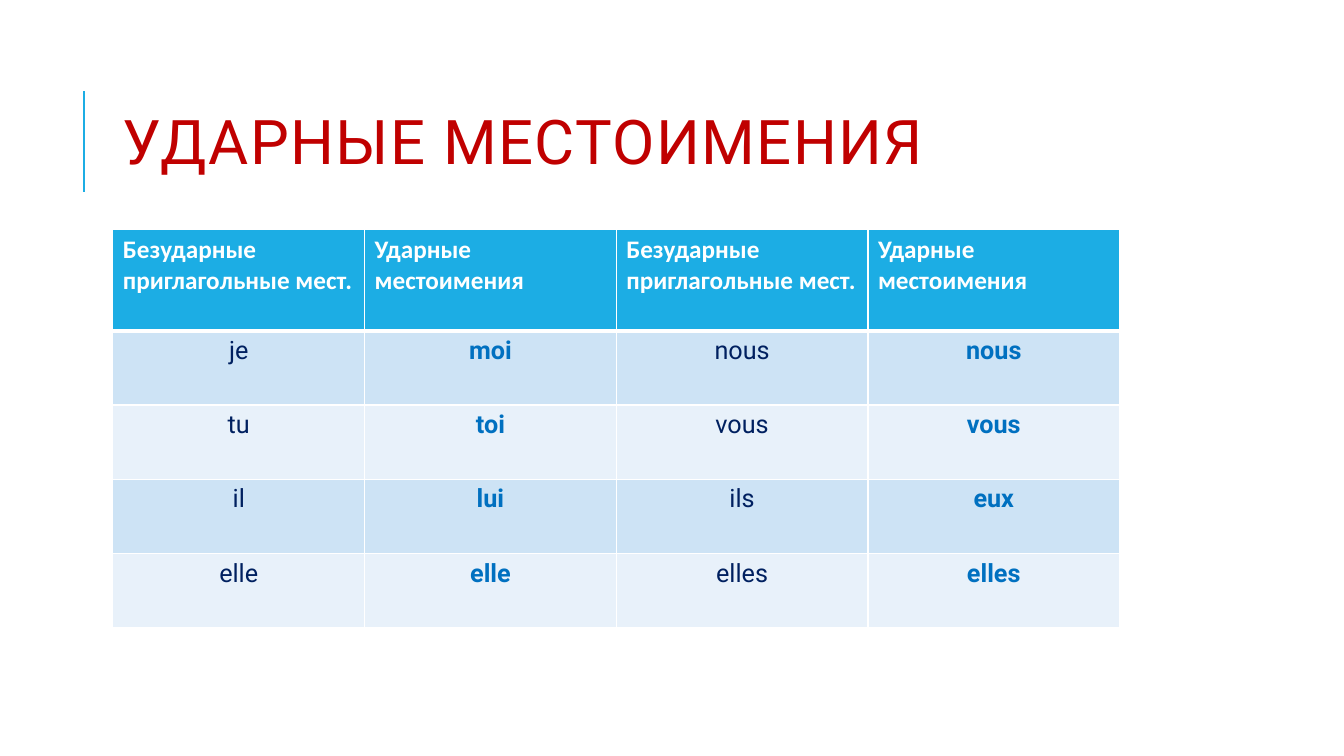
from dataclasses import dataclass

from lxml import etree
from pptx import Presentation
from pptx import util as u
from pptx.dml.color import RGBColor
from pptx.enum import shapes, text
from pptx.oxml import ns


@dataclass(frozen=True)
class Theme:
    title: str = "C00000"
    accent: str = "1CADE4"
    white: str = "FFFFFF"
    unstressed: str = "002060"
    stressed: str = "0070C0"
    bands: tuple = ("CDE3F5", "E8F1FA")
    title_size: int = 44
    table_size: int = 18
    body_font: str = "Roboto"
    header_font: str = "Calibri"


class SlideBuilder:
    def __init__(self, slide, theme):
        self.slide = slide
        self.theme = theme

    def add_run(self, paragraph, wording, size, font, color, bold=False):
        run = paragraph.add_run()
        run.text = wording
        run.font.size = u.Pt(size)
        run.font.name = font
        run.font.bold = bold
        run.font.color.rgb = RGBColor.from_string(color)
        return run

    def add_line(self, start, end, color, width):
        points = [u.Pt(value) for value in (*start, *end)]
        line = self.slide.shapes.add_connector(shapes.MSO_CONNECTOR.STRAIGHT, *points)
        line.line.color.rgb = RGBColor.from_string(color)
        line.line.width = u.Pt(width)
        etree.SubElement(line._element.spPr, ns.qn("a:effectLst"))

    def add_title(self, wording, left, top, width, height):
        box = self.slide.shapes.add_textbox(*map(u.Pt, (left, top, width, height)))
        frame = box.text_frame
        frame.word_wrap = True
        frame.vertical_anchor = text.MSO_ANCHOR.MIDDLE
        paragraph = frame.paragraphs[0]
        paragraph.line_spacing = 0.8
        theme = self.theme
        run = self.add_run(paragraph, wording, theme.title_size, theme.body_font, theme.title)
        run.font._element.set("spc", "100")

    def set_borders(self, cell, bottom_width):
        properties = cell._tc.get_or_add_tcPr()
        widths = {"lnL": 1, "lnR": 1, "lnT": 1, "lnB": bottom_width}
        for index, (side, width) in enumerate(widths.items()):
            border = etree.Element(ns.qn(f"a:{side}"), w=str(u.Pt(width)))
            fill = etree.SubElement(border, ns.qn("a:solidFill"))
            etree.SubElement(fill, ns.qn("a:srgbClr"), val=self.theme.white)
            properties.insert(index, border)

    def fill_cell(self, cell, wording, row, column):
        theme = self.theme
        header = row == 0
        stressed = column % 2 == 1
        paragraph = cell.text_frame.paragraphs[0]
        if header:
            fill, font, color = theme.accent, theme.header_font, theme.white
        else:
            fill, font = theme.bands[(row - 1) % 2], theme.body_font
            color = theme.stressed if stressed else theme.unstressed
            paragraph.alignment = text.PP_ALIGN.CENTER
        self.add_run(paragraph, wording, theme.table_size, font, color, header or stressed)
        cell.fill.solid()
        cell.fill.fore_color.rgb = RGBColor.from_string(fill)
        self.set_borders(cell, 3 if header else 1)

    def add_table(self, rows, left, top, column_width, header_height, row_height):
        heights = [header_height] + [row_height] * (len(rows) - 1)
        width = column_width * len(rows[0])
        frame = self.slide.shapes.add_table(
            len(rows), len(rows[0]), *map(u.Pt, (left, top, width, sum(heights)))
        )
        table = frame.table
        for column in table.columns:
            column.width = u.Pt(column_width)
        for row, (wordings, height) in enumerate(zip(rows, heights)):
            table.rows[row].height = u.Pt(height)
            for column, wording in enumerate(wordings):
                self.fill_cell(table.cell(row, column), wording, row, column)


def main():
    presentation = Presentation()
    presentation.slide_width = u.Pt(960)
    presentation.slide_height = u.Pt(540)
    slide = presentation.slides.add_slide(presentation.slide_layouts[6])
    theme = Theme()
    builder = SlideBuilder(slide, theme)

    builder.add_line((60, 136.8), (60, 64.8), theme.accent, 1.5)
    builder.add_title("УДАРНЫЕ МЕСТОИМЕНИЯ", 80.64, 46, 765.4, 118)
    pronouns = [
        ("Безударные приглагольные мест.", "Ударные местоимения") * 2,
        ("je", "moi", "nous", "nous"),
        ("tu", "toi", "vous", "vous"),
        ("il", "lui", "ils", "eux"),
        ("elle", "elle", "elles", "elles"),
    ]
    builder.add_table(pronouns, 80.64, 164.2, 179.8, 72, 53.1)
    presentation.save("out.pptx")


if __name__ == "__main__":
    main()
